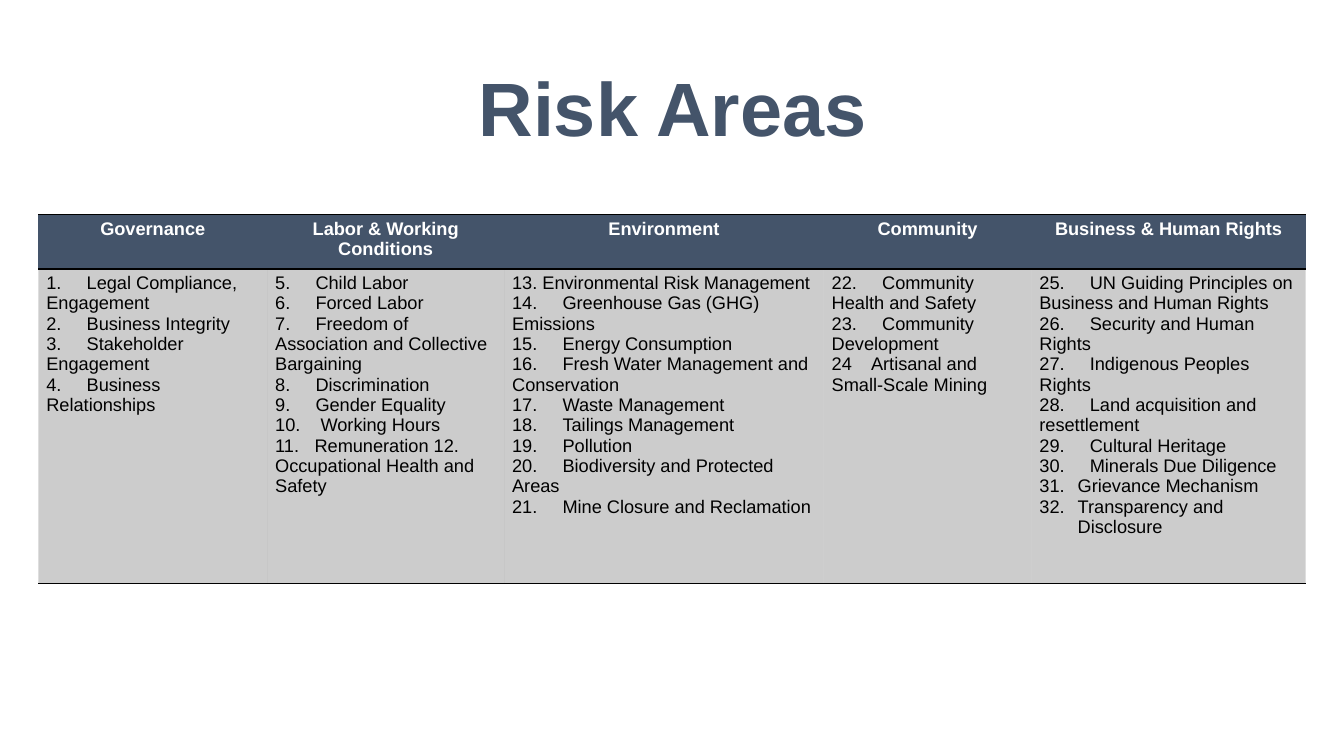
from lxml import etree
from pptx import Presentation
from pptx import util as u
from pptx.dml.color import RGBColor
from pptx.enum import text
from pptx.oxml.ns import qn

TITLE = "Risk Areas"
# heading, column width in inches, entries
AREAS = [
    ("Governance", 2.27, [
        "1.\tLegal Compliance, Engagement",
        "2.\tBusiness Integrity",
        "3.\tStakeholder Engagement",
        "4.\tBusiness Relationships"]),
    ("Labor & Working Conditions", 2.35, [
        "5.\tChild Labor",
        "6.\tForced Labor",
        "7.\tFreedom of Association and Collective Bargaining",
        "8.\tDiscrimination",
        "9.\tGender Equality",
        "10.\tWorking Hours",
        "11.\tRemuneration 12. Occupational Health and Safety"]),
    ("Environment", 3.17, [
        "13. Environmental Risk Management",
        "14.\tGreenhouse Gas (GHG) Emissions",
        "15.\tEnergy Consumption",
        "16.\tFresh Water Management and Conservation",
        "17.\tWaste Management",
        "18.\tTailings Management",
        "19.\tPollution",
        "20.\tBiodiversity and Protected Areas",
        "21.\tMine Closure and Reclamation"]),
    ("Community", 2.06, [
        "22.\tCommunity Health and Safety",
        "23.\tCommunity Development",
        "24\tArtisanal and Small-Scale Mining"]),
    ("Business & Human Rights", 2.72, [
        "25.\tUN Guiding Principles on Business and Human Rights",
        "26.\tSecurity and Human Rights",
        "27.\tIndigenous Peoples Rights",
        "28.\tLand acquisition and resettlement",
        "29.\tCultural Heritage",
        "30.\tMinerals Due Diligence",
        "Grievance Mechanism",
        "Transparency and Disclosure"]),
]
AUTO_NUMBER_START = 31
AUTO_NUMBER_INDENT = 0.38
TAB_ONE_DIGIT, TAB_TWO_DIGITS = 0.4, 0.5
NARROW_TABS = {"10.": 0.45, "11.": 0.39, "24": 0.39}
ROW_HEIGHTS = (0.54, 3.12)
NO_STYLE = "{2D5ABB26-0587-4C30-8999-92F81FD0307C}"

FONT = "Arial"
SLATE = RGBColor(0x44, 0x54, 0x6A)
WHITE = RGBColor(0xFF, 0xFF, 0xFF)
BLACK = RGBColor(0, 0, 0)


def style_paragraph(paragraph, size, color, bold=False, centred=False):
    paragraph.alignment = text.PP_ALIGN.CENTER if centred else text.PP_ALIGN.LEFT
    for run in paragraph.runs:
        run.font.name, run.font.size = FONT, u.Pt(size)
        run.font.bold = bold
        run.font.color.rgb = color


def add_number(paragraph, entry):
    """Set the tab stop after a typed number, or automatic numbering if there is none."""
    properties = paragraph._p.get_or_add_pPr()
    if not entry[0].isdigit():
        indent = u.Inches(AUTO_NUMBER_INDENT)
        properties.set("marL", str(indent))
        properties.set("indent", str(-indent))
        etree.SubElement(properties, qn("a:buFont"), typeface=FONT)
        etree.SubElement(properties, qn("a:buAutoNum"), type="arabicPeriod",
                         startAt=str(AUTO_NUMBER_START))
    elif "\t" in entry:
        number = entry.split("\t")[0]
        usual = TAB_ONE_DIGIT if len(number) == 2 else TAB_TWO_DIGITS
        position = u.Inches(NARROW_TABS.get(number, usual))
        tabs = etree.SubElement(properties, qn("a:tabLst"))
        etree.SubElement(tabs, qn("a:tab"), pos=str(position), algn="l")


def add_borders(cell, sides):
    properties = cell._tc.get_or_add_tcPr()
    for index, (side, width) in enumerate(sides):
        line = etree.Element(qn("a:" + side), w=str(u.Pt(width)))
        fill = etree.SubElement(line, qn("a:solidFill"))
        etree.SubElement(fill, qn("a:srgbClr"), val=str(BLACK))
        properties.insert(index, line)


def fill_cell(cell, lines, color, alpha=None):
    cell.margin_left = cell.margin_right = u.Inches(0.08)
    cell.margin_top = cell.margin_bottom = u.Inches(0.04)
    cell.fill.solid()
    cell.fill.fore_color.rgb = color
    if alpha:
        tint = cell._tc.tcPr.find(".//" + qn("a:srgbClr"))
        etree.SubElement(tint, qn("a:alpha"), val=str(alpha * 1000))
    cell.text_frame.text = "\n".join(lines)


def add_title(slide):
    box = slide.shapes.add_textbox(*map(u.Inches, (0.58, 0.54, 12.18, 1.02)))
    frame = box.text_frame
    frame.word_wrap = True
    frame.vertical_anchor = text.MSO_ANCHOR.BOTTOM
    frame.text = TITLE
    frame.paragraphs[0].line_spacing = 0.9
    style_paragraph(frame.paragraphs[0], 54, SLATE, bold=True, centred=True)


def add_risk_table(slide):
    width = sum(area[1] for area in AREAS)
    frame = slide.shapes.add_table(
        2, len(AREAS), *map(u.Inches, (0.38, 2.13, width, sum(ROW_HEIGHTS))))
    table = frame.table
    table._tbl.tblPr.find(qn("a:tableStyleId")).text = NO_STYLE
    table.horz_banding = False
    for row, height in zip(table.rows, ROW_HEIGHTS):
        row.height = u.Inches(height)
    for column, (heading, column_width, entries) in enumerate(AREAS):
        table.columns[column].width = u.Inches(column_width)
        header, body = table.cell(0, column), table.cell(1, column)
        fill_cell(header, [heading], SLATE)
        add_borders(header, [("lnT", 1), ("lnB", 1.5)])
        style_paragraph(header.text_frame.paragraphs[0], 13, WHITE, bold=True, centred=True)
        fill_cell(body, entries, BLACK, alpha=20)
        add_borders(body, [("lnT", 1.5), ("lnB", 1)])
        for paragraph, entry in zip(body.text_frame.paragraphs, entries):
            add_number(paragraph, entry)
            style_paragraph(paragraph, 13, BLACK)


def main():
    presentation = Presentation()
    presentation.slide_width = u.Inches(13.33)
    presentation.slide_height = u.Inches(7.5)
    slide = presentation.slides.add_slide(presentation.slide_layouts[6])
    add_title(slide)
    add_risk_table(slide)
    presentation.save("out.pptx")


if __name__ == "__main__":
    main()
